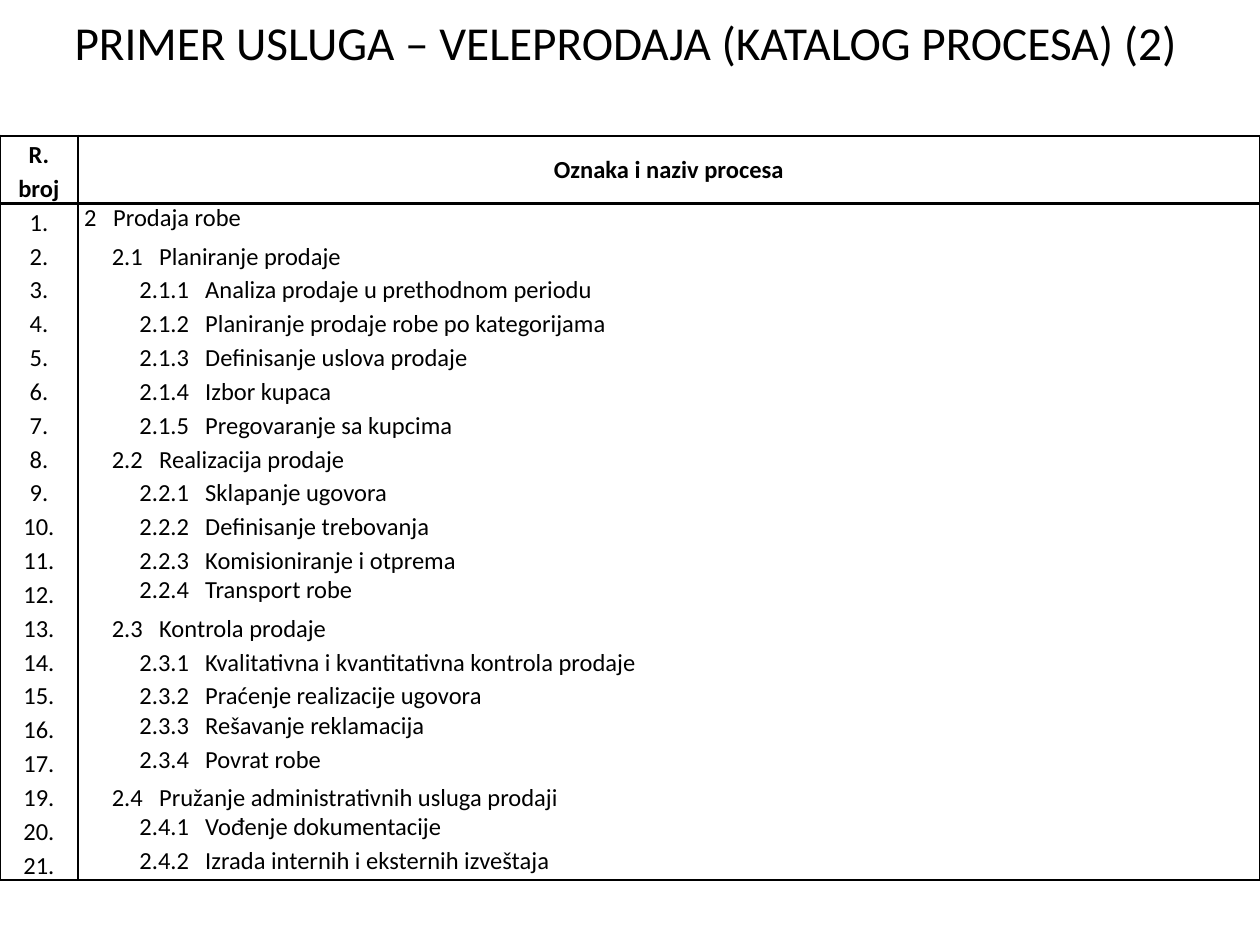
import lxml.etree
import pptx
import pptx.dml.color
import pptx.enum.text
import pptx.oxml.ns
import pptx.util

BLACK = pptx.dml.color.RGBColor(0, 0, 0)
WHITE = pptx.dml.color.RGBColor(255, 255, 255)
FONT = "Calibri"
CENTER = pptx.enum.text.PP_ALIGN.CENTER
LEFT = pptx.enum.text.PP_ALIGN.LEFT
MIDDLE = pptx.enum.text.MSO_ANCHOR.MIDDLE
TOP = pptx.enum.text.MSO_ANCHOR.TOP

THIN, THICK = 1, 1.5
LOOSE, SINGLE = 1.15, 1
NUMBER_INDENT = 15.8
NAME_INDENT, NAME_STEP = 16.6, 26.3

HEADINGS = ("R. broj", "Oznaka i naziv procesa")
# Row number, process mark, process name
PROCESSES = (
    (1, "2", "Prodaja robe"),
    (2, "2.1", "Planiranje prodaje"),
    (3, "2.1.1", "Analiza prodaje u prethodnom periodu"),
    (4, "2.1.2", "Planiranje prodaje robe po kategorijama"),
    (5, "2.1.3", "Definisanje uslova prodaje"),
    (6, "2.1.4", "Izbor kupaca"),
    (7, "2.1.5", "Pregovaranje sa kupcima"),
    (8, "2.2", "Realizacija prodaje"),
    (9, "2.2.1", "Sklapanje ugovora"),
    (10, "2.2.2", "Definisanje trebovanja"),
    (11, "2.2.3", "Komisioniranje i otprema"),
    (12, "2.2.4", "Transport robe"),
    (13, "2.3", "Kontrola prodaje"),
    (14, "2.3.1", "Kvalitativna i kvantitativna kontrola prodaje"),
    (15, "2.3.2", "Praćenje realizacije ugovora"),
    (16, "2.3.3", "Rešavanje reklamacija"),
    (17, "2.3.4", "Povrat robe"),
    (19, "2.4", "Pružanje administrativnih usluga prodaji"),
    (20, "2.4.1", "Vođenje dokumentacije"),
    (21, "2.4.2", "Izrada internih i eksternih izveštaja"),
)
SINGLE_SPACED = {"2", "2.2.4", "2.3.3", "2.3.4", "2.4.1", "2.4.2"}


def write(paragraph, text, size, alignment, spacing, bold=False):
    paragraph.alignment = alignment
    paragraph.line_spacing = spacing
    run = paragraph.add_run()
    run.text = text
    run.font.name = FONT
    run.font.size = pptx.util.Pt(size)
    run.font.bold = bold
    run.font.color.rgb = BLACK


def hang_name(paragraph, level):
    """Place the mark by its level and the name after the tab."""
    name_left = NAME_INDENT + NAME_STEP * level
    properties = paragraph._p.get_or_add_pPr()
    properties.set("marL", str(pptx.util.Pt(name_left)))
    properties.set("indent", str(pptx.util.Pt(NUMBER_INDENT * level - name_left)))


def set_borders(cell, left, right, top, bottom):
    """Draw the four cell borders; a width of 0 hides one."""
    properties = cell._tc.get_or_add_tcPr()
    widths = {"lnL": left, "lnR": right, "lnT": top, "lnB": bottom}
    for tag, width in widths.items():
        line = lxml.etree.SubElement(properties, pptx.oxml.ns.qn(f"a:{tag}"))
        line.set("w", str(pptx.util.Pt(width)))
        if width:
            fill = lxml.etree.SubElement(line, pptx.oxml.ns.qn("a:solidFill"))
            color = lxml.etree.SubElement(fill, pptx.oxml.ns.qn("a:srgbClr"))
            color.set("val", str(BLACK))
        else:
            lxml.etree.SubElement(line, pptx.oxml.ns.qn("a:noFill"))


def format_cell(cell, row, column, last_row):
    set_borders(
        cell,
        left=THIN if column else THICK,
        right=THIN,
        top=THICK if row <= 1 else 0,
        bottom=THICK if row == 0 else THIN if row == last_row else 0,
    )
    cell.fill.background()
    cell.margin_left = cell.margin_right = pptx.util.Pt(3.6)
    cell.margin_top = cell.margin_bottom = pptx.util.Pt(0)
    cell.vertical_anchor = TOP if row else MIDDLE


def add_title(slide, text):
    box = slide.shapes.add_textbox(
        pptx.util.Pt(8.6), pptx.util.Pt(3.6), pptx.util.Pt(697.7), pptx.util.Pt(46.8)
    )
    box.text_frame.word_wrap = True
    box.text_frame.vertical_anchor = MIDDLE
    write(box.text_frame.paragraphs[0], text, 27, CENTER, 0.8)


def add_process_table(slide):
    last_row = len(PROCESSES)
    table = slide.shapes.add_table(
        last_row + 1, 2,
        pptx.util.Pt(0), pptx.util.Pt(77.6), pptx.util.Pt(720), pptx.util.Pt(424.8),
    ).table
    table.first_row = False
    table.horz_banding = False
    for column, width in zip(table.columns, (44.5, 675.5)):
        column.width = pptx.util.Pt(width)
    for index, row in enumerate(table.rows):
        row.height = pptx.util.Pt(16.5 if index else 33)
        for column, cell in enumerate(row.cells):
            format_cell(cell, index, column, last_row)

    for column, (heading, spacing) in enumerate(zip(HEADINGS, (LOOSE, SINGLE))):
        paragraph = table.cell(0, column).text_frame.paragraphs[0]
        write(paragraph, heading, 14, CENTER, spacing, bold=True)
    for index, (number, mark, name) in enumerate(PROCESSES, start=1):
        paragraph = table.cell(index, 0).text_frame.paragraphs[0]
        write(paragraph, f"{number}.", 14, CENTER, LOOSE)
        paragraph = table.cell(index, 1).text_frame.paragraphs[0]
        spacing = SINGLE if mark in SINGLE_SPACED else LOOSE
        write(paragraph, f"{mark}\t{name}", 14, LEFT, spacing)
        hang_name(paragraph, mark.count("."))


def main():
    presentation = pptx.Presentation()
    presentation.slide_width = pptx.util.Pt(720)
    presentation.slide_height = pptx.util.Pt(540)
    slide = presentation.slides.add_slide(presentation.slide_layouts[6])
    slide.background.fill.solid()
    slide.background.fill.fore_color.rgb = WHITE
    add_title(slide, "PRIMER USLUGA – VELEPRODAJA (KATALOG PROCESA) (2)")
    add_process_table(slide)
    presentation.save("out.pptx")


if __name__ == "__main__":
    main()
